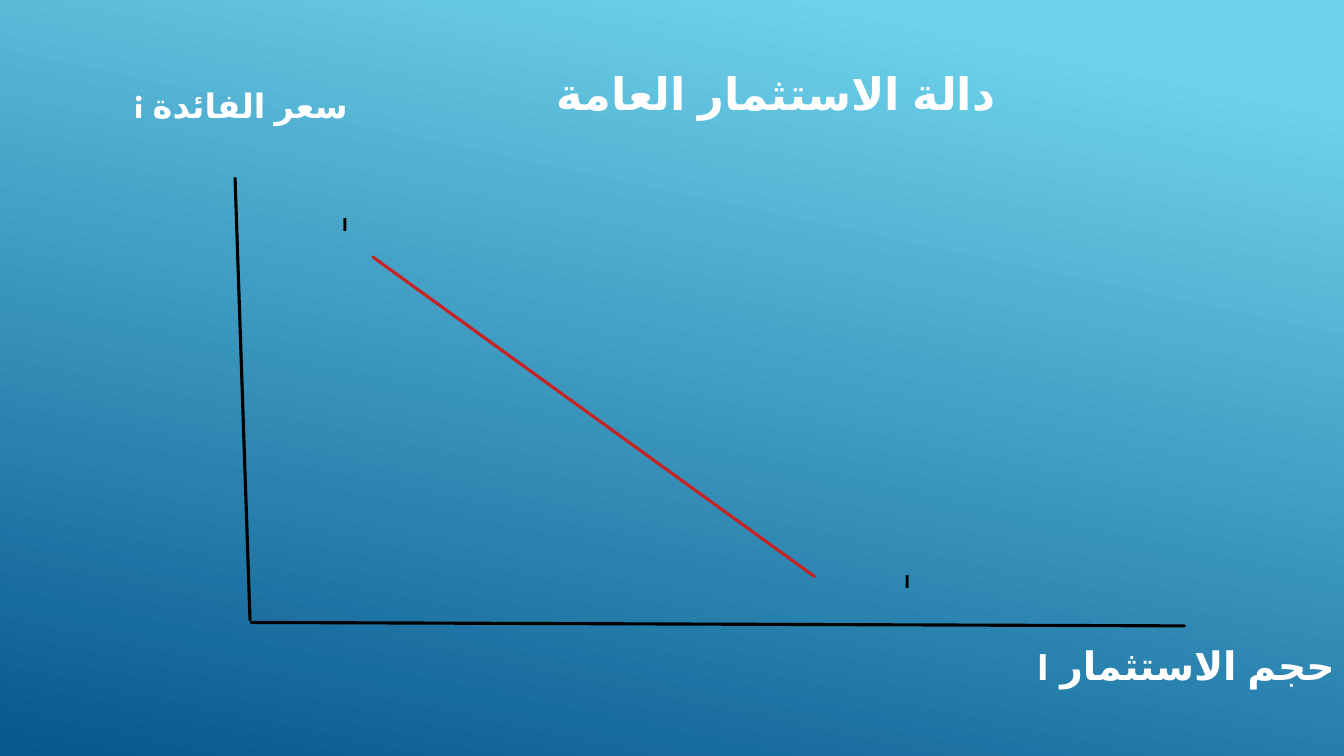
import pptx
import pptx.util
import pptx.dml.color
import pptx.enum.lang
import pptx.enum.shapes
import pptx.enum.text
from dataclasses import dataclass
from lxml import etree
from pptx.oxml.ns import qn

Pt = pptx.util.Pt
RGB = pptx.dml.color.RGBColor.from_string


@dataclass(frozen=True)
class Theme:
    font: str = "League Spartan"
    sky: str = "6ED2EB"
    deep: str = "06588E"
    white: str = "FFFFFF"
    black: str = "000000"
    red: str = "C62324"
    title_size: int = 32
    quantity_size: int = 28
    rate_size: int = 24
    curve_size: int = 14
    stroke: float = 2.25


theme = Theme()


def write_label(label, box, text, size, color):
    """Place a label and set its right-to-left text."""
    label.left, label.top, label.width, label.height = map(Pt, box)
    frame = label.text_frame
    frame.word_wrap = True
    frame.auto_size = pptx.enum.text.MSO_AUTO_SIZE.NONE
    frame.vertical_anchor = pptx.enum.text.MSO_ANCHOR.TOP
    paragraph = frame.paragraphs[0]
    paragraph.alignment = pptx.enum.text.PP_ALIGN.RIGHT
    paragraph.line_spacing = 1.07
    paragraph.space_before = Pt(0)
    paragraph.space_after = Pt(8)
    paragraph._p.get_or_add_pPr().set("rtl", "1")
    run = paragraph.add_run()
    run.text = text
    run.font.size = Pt(size)
    run.font.bold = True
    run.font.name = theme.font
    run.font.language_id = pptx.enum.lang.MSO_LANGUAGE_ID.ARABIC
    run.font.color.rgb = RGB(color)


deck = pptx.Presentation()
deck.slide_width, deck.slide_height = Pt(960), Pt(540)
slide = deck.slides.add_slide(deck.slide_layouts[5])

backdrop = slide.background.fill
backdrop.gradient()
backdrop.gradient_angle = 360 - 102
for stop, color, position in zip(
    backdrop.gradient_stops, (theme.sky, theme.deep), (0.1, 1)
):
    stop.color.rgb = RGB(color)
    stop.position = position

# Axes, then the downward-sloping investment curve
for start_x, start_y, end_x, end_y, color in (
    (167.9, 127.4, 178.6, 442.8, theme.black),
    (179.3, 444.6, 846, 447.1, theme.black),
    (266.4, 183.6, 581.8, 411.8, theme.red),
):
    stroke = slide.shapes.add_connector(
        pptx.enum.shapes.MSO_CONNECTOR.STRAIGHT,
        Pt(start_x), Pt(start_y), Pt(end_x), Pt(end_y),
    )
    stroke.line.color.rgb = RGB(color)
    stroke.line.width = Pt(theme.stroke)
    stroke.line._get_or_add_ln().set("cap", "rnd")
    etree.SubElement(stroke._element.spPr, qn("a:effectLst"))

write_label(
    slide.shapes.title, (375.1, 41, 343.4, 85),
    "دالة الاستثمار العامة", theme.title_size, theme.white,
)
for box, text, size, color in (
    ((658.1, 452.2, 302.4, 62.6), "حجم الاستثمار I", theme.quantity_size, theme.white),
    ((49.7, 55.4, 205.9, 86.4), "سعر الفائدة i", theme.rate_size, theme.white),
    ((217.4, 146.9, 38.2, 34.6), "I", theme.curve_size, theme.black),
    ((602.6, 401.8, 54.7, 33.1), "I", theme.curve_size, theme.black),
):
    write_label(slide.shapes.add_textbox(0, 0, 0, 0), box, text, size, color)

deck.save("out.pptx")
